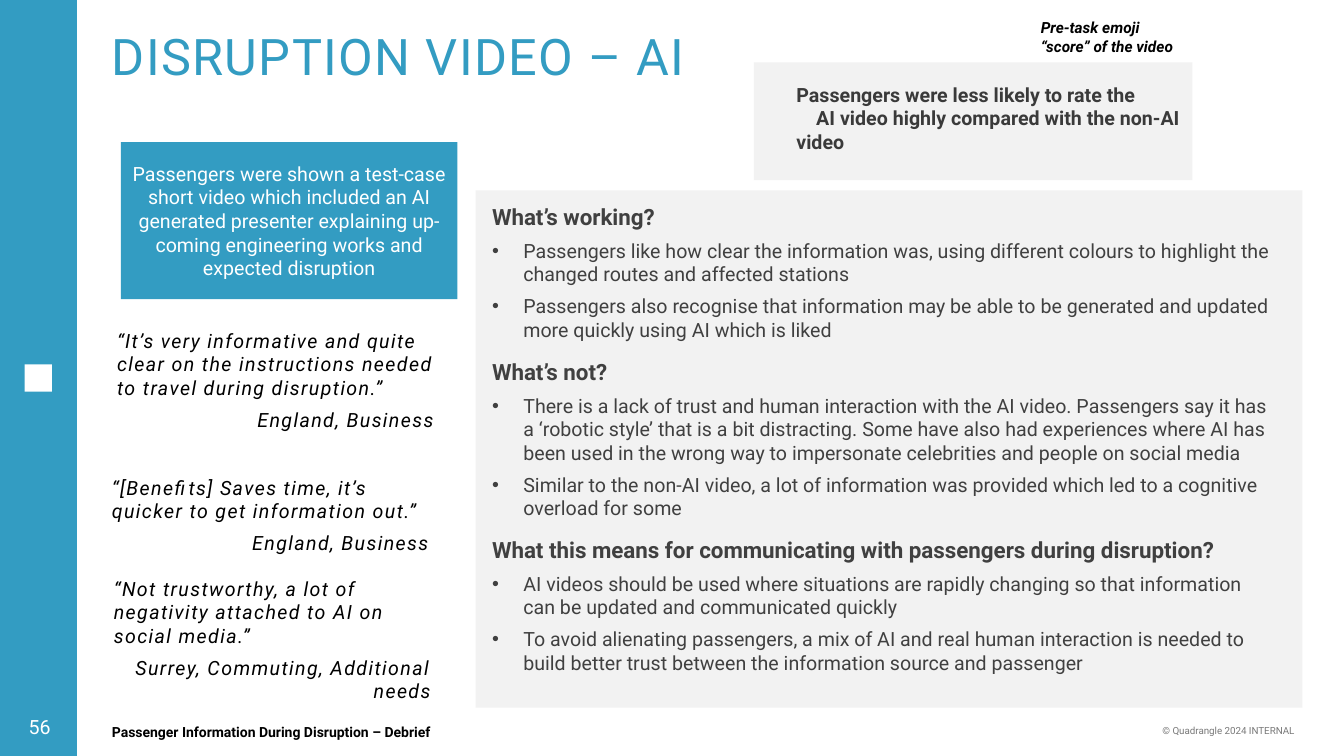
from lxml import etree
from pptx import Presentation
from pptx.dml.color import RGBColor
from pptx.enum.shapes import MSO_SHAPE
from pptx.enum.text import MSO_ANCHOR, PP_ALIGN
from pptx.oxml.ns import qn
from pptx.util import Cm, Pt

RECTANGLE = MSO_SHAPE.RECTANGLE
TOP, MIDDLE = MSO_ANCHOR.TOP, MSO_ANCHOR.MIDDLE
LEFT, CENTER, RIGHT = PP_ALIGN.LEFT, PP_ALIGN.CENTER, PP_ALIGN.RIGHT

BLUE, GREY, WHITE, BLACK = "339CC2", "F2F2F2", "FFFFFF", "000000"
DARK, BODY, PALE = "3A3A3A", "404040", "797979"
INSET, BULLET_INDENT = 0.25, 0.79

QUOTES = [
    ((2.95, 8.28, 7.98, 3.2),
     "“It’s very informative and quite clear on the instructions needed to travel during disruption.”",
     "England, Business"),
    ((2.82, 11.99, 7.98, 2),
     "“[Benefits] Saves time, it’s quicker to get information out.”",
     "England, Business"),
    ((2.87, 14.53, 7.98, 3.2),
     "“Not trustworthy, a lot of negativity attached to AI on social media.”",
     "Surrey, Commuting, Additional needs"),
]

FINDINGS = [
    ("What’s working?", [
        "Passengers like how clear the information was, using different colours to highlight the changed routes and affected stations",
        "Passengers also recognise that information may be able to be generated and updated more quickly using AI which is liked",
    ]),
    ("What’s not?", [
        "There is a lack of trust and human interaction with the AI video. Passengers say it has a ‘robotic style’ that is a bit distracting. Some have also had experiences where AI has been used in the wrong way to impersonate celebrities and people on social media",
        "Similar to the non-AI video, a lot of information was provided which led to a cognitive overload for some",
    ]),
    ("What this means for communicating with passengers during disruption?", [
        "AI videos should be used where situations are rapidly changing so that information can be updated and communicated quickly",
        "To avoid alienating passengers, a mix of AI and real human interaction is needed to build better trust between the information source and passenger",
    ]),
]


def color(value):
    return RGBColor.from_string(value)


def apply_format(target, values):
    for name, value in values.items():
        setattr(target, name, value)


def add_panel(slide, box, fill):
    shape = slide.shapes.add_shape(RECTANGLE, *map(Cm, box))
    shape.shadow.inherit = False
    shape.fill.solid()
    shape.fill.fore_color.rgb = color(fill)
    shape.line.fill.background()
    return shape


def set_frame(shape, anchor=TOP, inset=(0, 0)):
    across, down = map(Cm, inset)
    apply_format(shape.text_frame, {
        "word_wrap": True, "vertical_anchor": anchor,
        "margin_left": across, "margin_right": across,
        "margin_top": down, "margin_bottom": down,
    })
    return shape.text_frame


def add_frame(slide, box, anchor=TOP, inset=(0, 0)):
    return set_frame(slide.shapes.add_textbox(*map(Cm, box)), anchor, inset)


def write(frame, text, size, ink, align=LEFT, before=0, indent=0,
          bullet=False, spacing=0, **style):
    first = not frame.paragraphs[0].runs
    paragraph = frame.paragraphs[0] if first else frame.add_paragraph()
    if indent:
        properties = paragraph._p.get_or_add_pPr()
        properties.set("marL", str(Cm(indent)))
        if bullet:
            properties.set("indent", str(-Cm(indent)))
            etree.SubElement(properties, qn("a:buFont")).set("typeface", "Arial")
            etree.SubElement(properties, qn("a:buChar")).set("char", "•")
    apply_format(paragraph, {"alignment": align, "space_before": Pt(0 if first else before)})
    run = paragraph.add_run()
    run.text = text
    apply_format(run.font, {"name": "Roboto", "size": Pt(size), **style})
    run.font.color.rgb = color(ink)
    if spacing:
        run._r.get_or_add_rPr().set("spc", str(spacing * 100))


def add_sidebar(slide, box):
    left, top, width, height = box
    add_panel(slide, box, BLUE)
    add_panel(slide, (left + 0.62, top + 9.18, 0.69, 0.69), WHITE)
    frame = add_frame(slide, (left, top + height - 1.24, width + 0.06, 1), MIDDLE, (INSET, 0.13))
    write(frame, "56", 14, WHITE, CENTER)


def add_title(slide, box):
    write(add_frame(slide, box), "DISRUPTION VIDEO – AI", 36, BLUE, spacing=1)


def add_verdict(slide, box):
    left, top, width, height = box
    add_panel(slide, box, GREY)
    frame = add_frame(slide, (left + 1.07, top + 0.51, width - 1.07, 1.8))
    for text, indent in [("Passengers were less likely to rate the", 0),
                         ("AI video highly compared with the non-AI", 0.5),
                         ("video", 0)]:
        write(frame, text, 14, DARK, indent=indent, bold=True)
    frame = add_frame(slide, (left + 6.98, top - 1.24, 4.09, 1.2), inset=(INSET, 0.13))
    write(frame, "Pre-task emoji “score” of the video", 11, BLACK, bold=True, italic=True)


def add_introduction(slide, box):
    frame = set_frame(add_panel(slide, box, BLUE), MIDDLE, (INSET, 0.13))
    write(frame, "Passengers were shown a test-case short video which included an AI generated presenter explaining up-coming engineering works and expected disruption", 14, WHITE, CENTER)


def add_quote(slide, box, quote, speaker):
    frame = add_frame(slide, box)
    for text, align in [(quote, LEFT), (speaker, RIGHT)]:
        write(frame, text, 14, BLACK, align, before=6, spacing=1, italic=True)


def add_findings(slide, box):
    left, top, width, height = box
    add_panel(slide, box, GREY)
    frame = add_frame(slide, (left + 0.41, top + 0.33, width - 1.14, height - 0.56))
    for heading, points in FINDINGS:
        write(frame, heading, 16, BODY, before=12, bold=True)
        for point in points:
            write(frame, point, 14, BODY, before=6, indent=BULLET_INDENT, bullet=True)


def add_footer(slide, box):
    left, top, width, height = box
    frame = add_frame(slide, (left, top + 0.1, 10.31, 0.43), MIDDLE)
    write(frame, "Passenger Information During Disruption – Debrief", 10, BLACK, bold=True)
    frame = add_frame(slide, (left + width - 11.43, top, 11.43, height), MIDDLE, (INSET, 0.13))
    write(frame, "© Quadrangle 2024 INTERNAL", 7, PALE, RIGHT)


def main():
    presentation = Presentation()
    apply_format(presentation, {"slide_width": Cm(33.87), "slide_height": Cm(19.05)})
    slide = presentation.slides.add_slide(presentation.slide_layouts[6])
    add_sidebar(slide, (0, 0, 1.94, 19.05))
    add_title(slide, (2.82, 0.64, 20.09, 1.55))
    add_verdict(slide, (19, 1.57, 11.05, 2.97))
    add_introduction(slide, (3.05, 3.58, 8.48, 3.96))
    for box, quote, speaker in QUOTES:
        add_quote(slide, box, quote, speaker)
    add_findings(slide, (11.99, 4.8, 20.83, 13.03))
    add_footer(slide, (2.82, 18.14, 30.05, 0.56))
    presentation.save("out.pptx")


if __name__ == "__main__":
    main()
